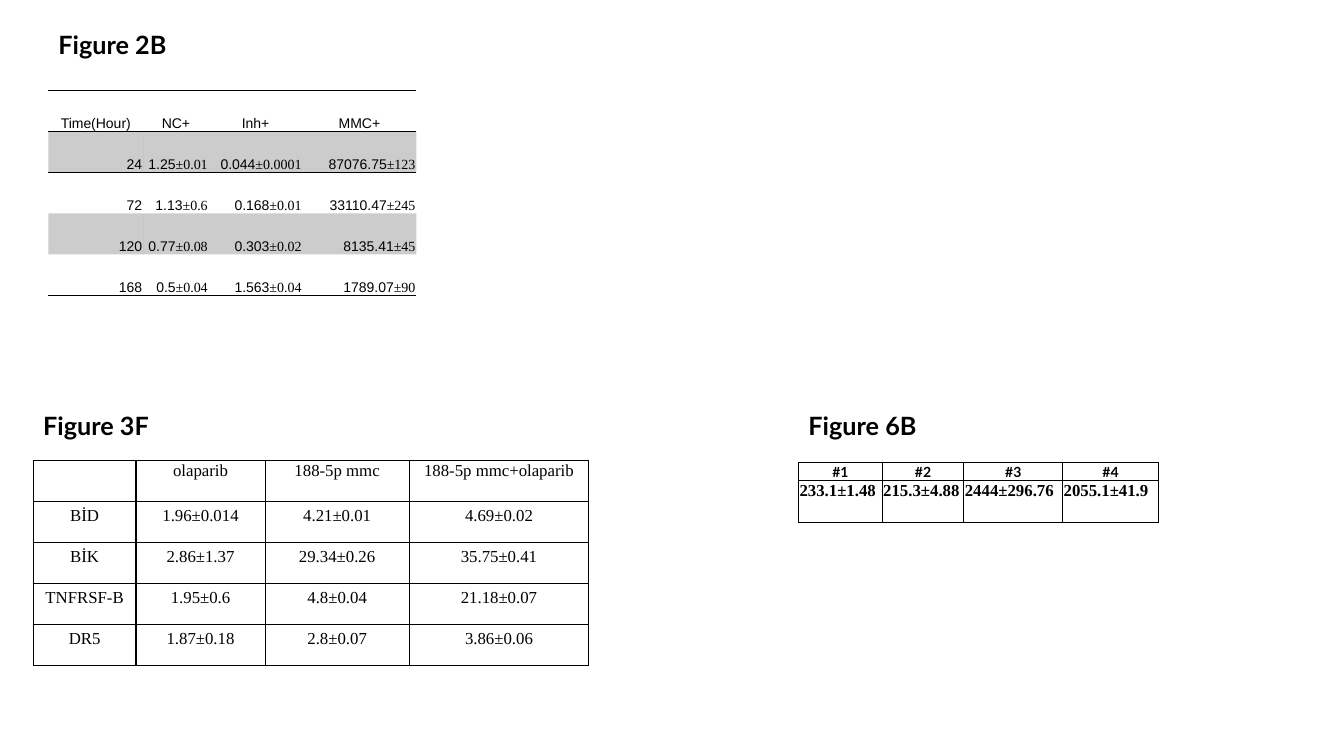
from lxml import etree
from pptx import Presentation
from pptx.dml.color import RGBColor
from pptx.enum.text import MSO_ANCHOR as Anchor, MSO_AUTO_SIZE as AutoSize, PP_ALIGN as Align
from pptx.oxml.ns import qn
from pptx.util import Inches, Pt

BLACK = RGBColor(0x00, 0x00, 0x00)
NO_STYLE = "{2D5ABB26-0587-4C30-8999-92F81FD0307C}"
SERIF = "Times New Roman"
TIGHT = dict(margin_left=Inches(0.01), margin_right=Inches(0.01),
             margin_top=Inches(0.01), margin_bottom=0)

DECAY_ROWS = [
    ["Time(Hour)", "NC+", "Inh+", "MMC+"],
    ["24", "1.25±0.01", "0.044±0.0001", "87076.75±123"],
    ["72", "1.13±0.6", "0.168±0.01", "33110.47±245"],
    ["120", "0.77±0.08", "0.303±0.02", "8135.41±45"],
    ["168", "0.5±0.04", "1.563±0.04", "1789.07±90"],
]
GENE_ROWS = [
    ["", "olaparib", "188-5p mmc", "188-5p mmc+olaparib"],
    ["BİD", "1.96±0.014", "4.21±0.01", "4.69±0.02"],
    ["BİK", "2.86±1.37", "29.34±0.26", "35.75±0.41"],
    ["TNFRSF-B", "1.95±0.6", "4.8±0.04", "21.18±0.07"],
    ["DR5", "1.87±0.18", "2.8±0.07", "3.86±0.06"],
]
SAMPLE_ROWS = [
    ["#1", "#2", "#3", "#4"],
    ["233.1±1.48", "215.3±4.88", "2444±296.76", "2055.1±41.9"],
]


def set_attributes(target, values):
    for name, value in values.items():
        setattr(target, name, value)


def add_run(paragraph, text, font_name, size, bold=False):
    run = paragraph.add_run()
    run.text = text
    set_attributes(run.font, dict(name=font_name, size=Pt(size), bold=bold))
    run.font.color.rgb = BLACK


def write_caption(shape, text, left, top):
    set_attributes(shape, dict(left=Inches(left), top=Inches(top),
                               width=Inches(1.45), height=Inches(0.4)))
    frame = shape.text_frame
    set_attributes(frame, dict(word_wrap=True, vertical_anchor=Anchor.TOP,
                               auto_size=AutoSize.SHAPE_TO_FIT_TEXT))
    paragraph = frame.paragraphs[0]
    set_attributes(paragraph, dict(alignment=Align.LEFT, line_spacing=1.0))
    add_run(paragraph, text, "Lato", 18, bold=True)


def add_caption(slide, text, left, top):
    box = slide.shapes.add_textbox(0, 0, 0, 0)
    write_caption(box, text, left, top)


def add_plain_table(slide, left, top, widths, heights):
    frame = slide.shapes.add_table(len(heights), len(widths), Inches(left), Inches(top),
                                   Inches(sum(widths)), Inches(sum(heights)))
    table = frame.table
    set_attributes(table, dict(first_row=False, horz_banding=False))
    frame._element.find(".//" + qn("a:tableStyleId")).text = NO_STYLE
    for column, width in zip(table.columns, widths):
        column.width = Inches(width)
    for row, height in zip(table.rows, heights):
        row.height = Inches(height)
    return table


def set_borders(cell, sides):
    """Draw 1 pt black lines on the given sides, a string of L, R, T and B in that order."""
    properties = cell._tc.get_or_add_tcPr()
    for index, side in enumerate(sides):
        line = etree.Element(qn(f"a:ln{side}"), w=str(Pt(1)))
        fill = etree.SubElement(line, qn("a:solidFill"))
        etree.SubElement(fill, qn("a:srgbClr"), val=str(BLACK))
        properties.insert(index, line)


def shade(cell, percent):
    cell.fill.solid()
    cell.fill.fore_color.rgb = BLACK
    color = cell._tc.tcPr.find(".//" + qn("a:srgbClr"))
    etree.SubElement(color, qn("a:alpha"), val=str(percent * 1000))


def write_cell(cell, text, alignment, size, value_font, error_font, bold=False):
    """Write a value and its ± error, each in its own font."""
    paragraph = cell.text_frame.paragraphs[0]
    paragraph.alignment = alignment
    value, sign, error = text.partition("±")
    for part, font_name in ((value, value_font), (sign + error, error_font)):
        if part:
            add_run(paragraph, part, font_name, size, bold)


def fill_table(table, rows, format_cell):
    for row_index, texts in enumerate(rows):
        for column_index, text in enumerate(texts):
            cell = table.cell(row_index, column_index)
            cell.fill.background()
            format_cell(cell, text, row_index)


def format_decay_cell(cell, text, row):
    set_attributes(cell, dict(vertical_anchor=Anchor.BOTTOM, **TIGHT))
    write_cell(cell, text, Align.RIGHT if row else Align.CENTER, 10, "Arial", SERIF)
    if row % 2:
        shade(cell, 20)
    set_borders(cell, {0: "TB", 1: "T", len(DECAY_ROWS) - 1: "B"}.get(row, ""))


def format_gene_cell(cell, text, row):
    if row == 0:
        set_attributes(cell, TIGHT)
    write_cell(cell, text, Align.CENTER, 12, SERIF, SERIF)
    set_borders(cell, "LRTB")


def format_sample_cell(cell, text, row):
    set_attributes(cell, TIGHT)
    if row == 0:
        cell.vertical_anchor = Anchor.BOTTOM
        write_cell(cell, text, Align.CENTER, 10, "Lato", "Lato", bold=True)
    else:
        write_cell(cell, text, Align.LEFT, 12, SERIF, SERIF, bold=True)
    set_borders(cell, "LRTB")


def add_figure_2b(slide, left, top):
    write_caption(slide.shapes.title, "Figure 2B", left, top)
    table = add_plain_table(slide, left, top + 0.66, [0.94, 0.65, 0.93, 1.13], [0.406] * 5)
    fill_table(table, DECAY_ROWS, format_decay_cell)


def add_figure_3f(slide, left, top):
    add_caption(slide, "Figure 3F", left, top)
    table = add_plain_table(slide, left, top + 0.55, [1.02, 1.28, 1.43, 1.78], [0.406] * 5)
    fill_table(table, GENE_ROWS, format_gene_cell)


def add_figure_6b(slide, left, top):
    add_caption(slide, "Figure 6B", left, top)
    table = add_plain_table(slide, left, top + 0.57, [0.83, 0.81, 0.98, 0.95], [0.18, 0.41])
    fill_table(table, SAMPLE_ROWS, format_sample_cell)


def main():
    presentation = Presentation()
    set_attributes(presentation, dict(slide_width=Inches(13.33), slide_height=Inches(7.5)))
    slide = presentation.slides.add_slide(presentation.slide_layouts.get_by_name("Title Only"))
    add_figure_2b(slide, 0.48, 0.24)
    add_figure_3f(slide, 0.33, 4.02)
    add_figure_6b(slide, 7.92, 4.02)
    presentation.save("out.pptx")


if __name__ == "__main__":
    main()
